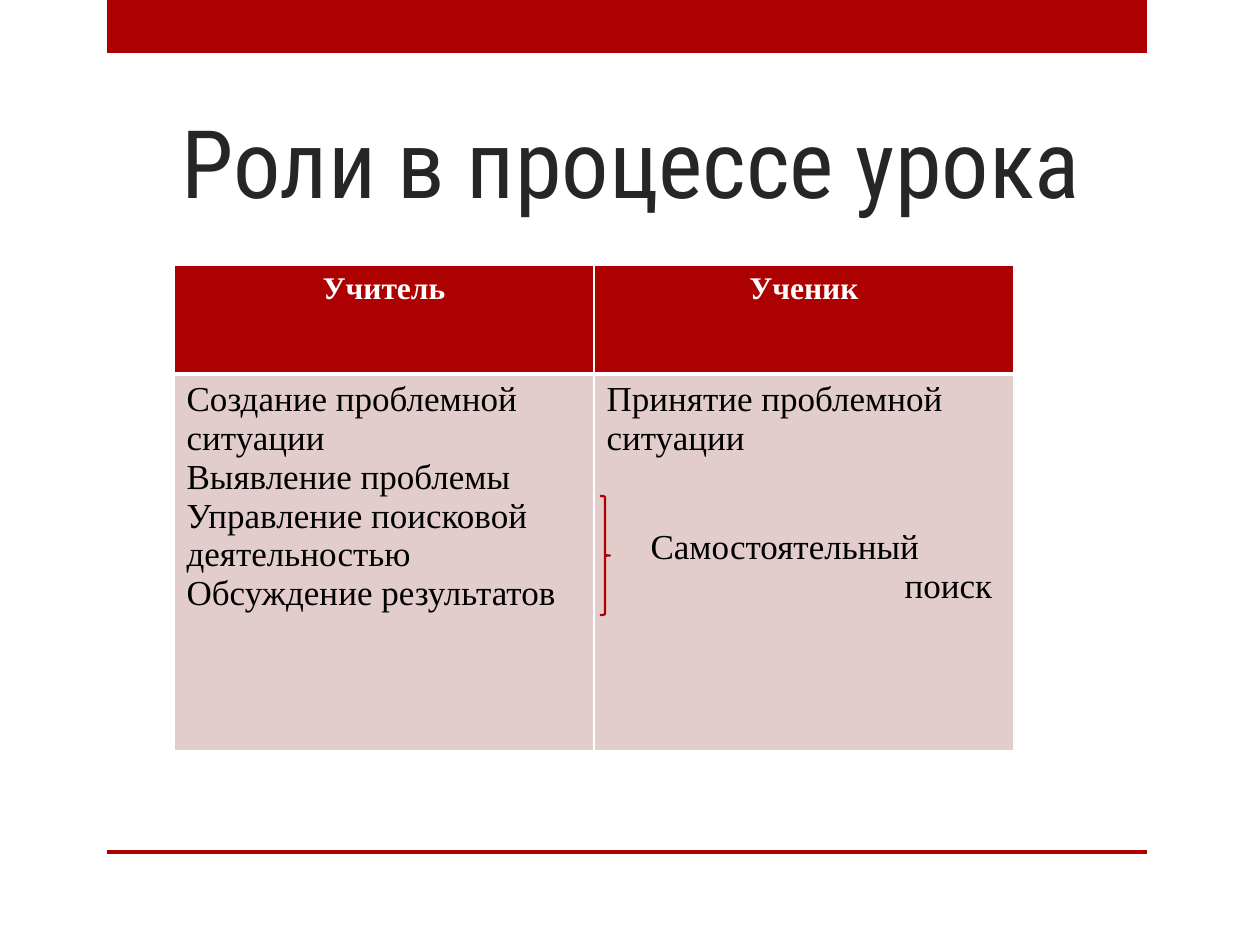
import dataclasses

import lxml.etree
import pptx
import pptx.dml.color
import pptx.enum.shapes
import pptx.enum.text
import pptx.oxml.ns
import pptx.util

PX = 7257  # EMU per pixel, 126 px to the inch
SHAPE = pptx.enum.shapes.MSO_SHAPE
ALIGN = pptx.enum.text.PP_ALIGN


@dataclasses.dataclass(frozen=True)
class Theme:
    accent: str = "AD0101"
    tint: str = "E3CCCC"
    title: str = "262626"
    dark: str = "000000"
    light: str = "FFFFFF"
    title_font: str = "Roboto Condensed"
    body_font: str = "Times New Roman"
    title_size: int = 54
    header_size: int = 18
    body_size: int = 20


def rgb(value):
    return pptx.dml.color.RGBColor.from_string(value)


def scaled(*lengths):
    return [length * PX for length in lengths]


class SlideBuilder:
    def __init__(self, page, theme):
        self.page = page
        self.theme = theme

    def style(self, para, font, size, color, bold=False):
        for span in para.runs:
            span.font.name = font
            span.font.size = pptx.util.Pt(size)
            span.font.color.rgb = rgb(color)
            span.font.bold = bold

    def bar(self, *area):
        shape = self.page.shapes.add_shape(SHAPE.RECTANGLE, *scaled(*area))
        shape.shadow.inherit = False
        shape.fill.solid()
        shape.fill.fore_color.rgb = rgb(self.theme.accent)
        shape.line.fill.background()

    def brace(self, *area):
        shape = self.page.shapes.add_shape(SHAPE.RIGHT_BRACE, *scaled(*area))
        shape.shadow.inherit = False
        shape.fill.background()
        shape.line.color.rgb = rgb(self.theme.accent)
        shape.line.width = pptx.util.Pt(1.25)

    def title(self, text, *area):
        box = self.page.shapes.add_textbox(*scaled(*area))
        frame = box.text_frame
        frame.word_wrap = True
        frame.vertical_anchor = pptx.enum.text.MSO_ANCHOR.BOTTOM
        frame.text = text
        para = frame.paragraphs[0]
        para.alignment = ALIGN.CENTER
        self.style(para, self.theme.title_font, self.theme.title_size, self.theme.title)

    def borders(self, cell, **widths):
        """Put white edge lines ahead of the cell fill, in schema order."""
        properties = cell._tc.get_or_add_tcPr()
        for index, side in enumerate("LRTB"):
            line = lxml.etree.Element(pptx.oxml.ns.qn("a:ln" + side))
            line.set("w", str(pptx.util.Pt(widths.get(side, 1))))
            fill = lxml.etree.SubElement(line, pptx.oxml.ns.qn("a:solidFill"))
            color = lxml.etree.SubElement(fill, pptx.oxml.ns.qn("a:srgbClr"))
            color.set("val", self.theme.light)
            properties.insert(index, line)

    def fill_cell(self, cell, lines, color):
        cell.fill.solid()
        cell.fill.fore_color.rgb = rgb(color)
        cell.text_frame.text = "\n".join(lines)
        return cell.text_frame.paragraphs

    def table(self, headers, columns, area, row_heights):
        theme = self.theme
        frame = self.page.shapes.add_table(2, len(headers), *scaled(*area))
        table = frame.table
        for row, height in zip(table.rows, row_heights):
            row.height = height * PX
        for index, (header, lines) in enumerate(zip(headers, columns)):
            table.columns[index].width = area[2] // len(headers) * PX
            head, body = table.cell(0, index), table.cell(1, index)
            for para in self.fill_cell(head, [header], theme.accent):
                para.alignment = ALIGN.CENTER
                self.style(para, theme.body_font, theme.header_size, theme.light, True)
            for para in self.fill_cell(body, lines, theme.tint):
                self.style(para, theme.body_font, theme.body_size, theme.dark)
            self.borders(head, B=3)
            self.borders(body, T=3)
        return table

    def indent(self, para, left):
        para._p.get_or_add_pPr().set("marL", str(left * PX))


def main():
    deck = pptx.Presentation()
    deck.slide_width = pptx.util.Inches(10)
    deck.slide_height = pptx.util.Inches(7.5)
    page = deck.slides.add_slide(deck.slide_layouts[6])
    builder = SlideBuilder(page, Theme())

    # Top and bottom bands
    builder.bar(107, 0, 1040, 53)
    builder.bar(107, 850, 1040, 4)

    builder.title("Роли в процессе урока", 64, 66, 1134, 158)

    # Roles of teacher and pupil
    teacher = [
        "Создание проблемной ситуации",
        "Выявление проблемы",
        "Управление поисковой деятельностью",
        "Обсуждение результатов",
    ]
    pupil = ["Принятие проблемной ситуации", "Самостоятельный", "поиск"]
    table = builder.table(
        ["Учитель", "Ученик"], [teacher, pupil], (174, 265, 840, 486), (109, 377)
    )

    # The pupil's search stands beside the brace, stepped to the right
    search, search_end = table.cell(1, 1).text_frame.paragraphs[1:]
    search.space_before = pptx.util.Pt(40)
    builder.indent(search, 44)
    builder.indent(search_end, 298)
    builder.brace(600, 496, 10, 119)

    deck.save("out.pptx")


if __name__ == "__main__":
    main()
